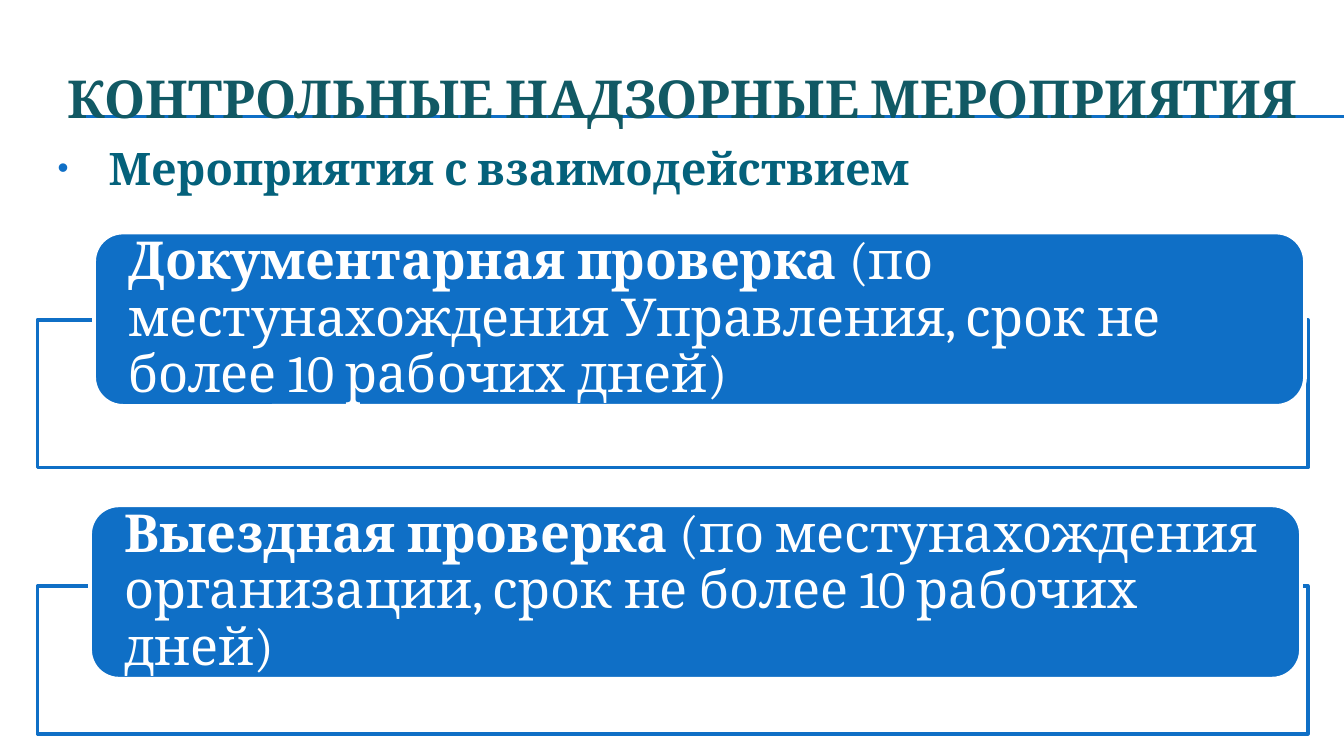
from dataclasses import dataclass
from lxml import etree
from pptx import Presentation
from pptx.dml.color import RGBColor
from pptx.enum.shapes import MSO_CONNECTOR, MSO_SHAPE
from pptx.enum.text import MSO_ANCHOR, PP_ALIGN
from pptx.oxml.ns import qn
from pptx.util import Inches, Pt


@dataclass(frozen=True)
class Theme:
    font: str = "Cambria"
    blue: str = "0F6FC6"
    white: str = "FFFFFF"
    title: str = "115964"
    subtitle: str = "04617B"
    large: int = 28
    medium: int = 24


theme = Theme()


def write_text(shape, runs, size, color, align=PP_ALIGN.LEFT, anchor=MSO_ANCHOR.TOP,
               inset_x=0.1, inset_y=0.05, line_spacing=None, space_before=0):
    frame = shape.text_frame
    frame.word_wrap = True
    frame.vertical_anchor = anchor
    frame.margin_left = frame.margin_right = Inches(inset_x)
    frame.margin_top = frame.margin_bottom = Inches(inset_y)
    paragraph = frame.paragraphs[0]
    paragraph.alignment = align
    paragraph.line_spacing = line_spacing
    paragraph.space_before = Pt(space_before)
    for text, bold in runs:
        run = paragraph.add_run()
        run.text = text
        run.font.name = theme.font
        run.font.size = Pt(size)
        run.font.bold = bold
        run.font.color.rgb = RGBColor.from_string(color)
    return paragraph


def add_box(kind, left, top, width, height, fill, line):
    shape = slide.shapes.add_shape(kind, Inches(left), Inches(top), Inches(width), Inches(height))
    shape.shadow.inherit = False
    shape.fill.solid()
    shape.fill.fore_color.rgb = RGBColor.from_string(fill)
    shape.line.color.rgb = RGBColor.from_string(line)
    shape.line.width = Pt(2)
    return shape


presentation = Presentation()
presentation.slide_width = Inches(10)
presentation.slide_height = Inches(10 * 9 / 16)
slide = presentation.slides.add_slide(presentation.slide_layouts[6])

for rule_y in (0.86, 0.87):
    rule = slide.shapes.add_connector(
        MSO_CONNECTOR.STRAIGHT, Inches(0.56), Inches(rule_y), Inches(10), Inches(rule_y))
    rule.line.color.rgb = RGBColor.from_string(theme.blue)
    rule.line.width = Pt(0.75)
    etree.SubElement(rule._element.spPr, qn("a:effectLst"))

title = slide.shapes.add_textbox(Inches(0.33), Inches(0.38), Inches(9.5), Inches(0.69))
write_text(title, [("КОНТРОЛЬНЫЕ НАДЗОРНЫЕ МЕРОПРИЯТИЯ", True)], theme.large, theme.title,
           align=PP_ALIGN.CENTER, anchor=MSO_ANCHOR.MIDDLE)

subtitle = slide.shapes.add_textbox(Inches(0.33), Inches(1), Inches(9.5), Inches(3.99))
bullet_line = write_text(subtitle, [("Мероприятия с взаимодействием", True)],
                         theme.medium, theme.subtitle, space_before=4.8)
properties = bullet_line._p.get_or_add_pPr()
properties.set("marL", str(Inches(0.38)))
properties.set("indent", str(-Inches(0.38)))
bullet_color = etree.SubElement(properties, qn("a:buClr"))
etree.SubElement(bullet_color, qn("a:srgbClr"), val=theme.blue)
etree.SubElement(properties, qn("a:buSzPct"), val="70000")
etree.SubElement(properties, qn("a:buFont"), typeface="Arial")
etree.SubElement(properties, qn("a:buChar"), char="•")

inspections = [
    (2.38, 0.7, 1.73, "Документарная проверка ",
     "(по местунахождения Управления, срок не более 10 рабочих дней)"),
    (4.36, 0.67, 3.76, "Выездная проверка ",
     "(по местунахождения организации, срок не более 10 рабочих дней)"),
]
for frame_top, label_left, label_top, name, details in inspections:
    outline = add_box(MSO_SHAPE.RECTANGLE, 0.28, frame_top, 9.45, 1.1, theme.white, theme.blue)
    fill_color = outline._element.spPr.find(qn("a:solidFill")).find(qn("a:srgbClr"))
    etree.SubElement(fill_color, qn("a:alpha"), val="90000")
    label = add_box(MSO_SHAPE.ROUNDED_RECTANGLE, label_left, label_top, 9.01, 1.29,
                    theme.blue, theme.white)
    write_text(label, [(name, True), (details, False)], theme.large, theme.white,
               anchor=MSO_ANCHOR.MIDDLE, inset_x=0.19, inset_y=0, line_spacing=0.9)

presentation.save("out.pptx")
